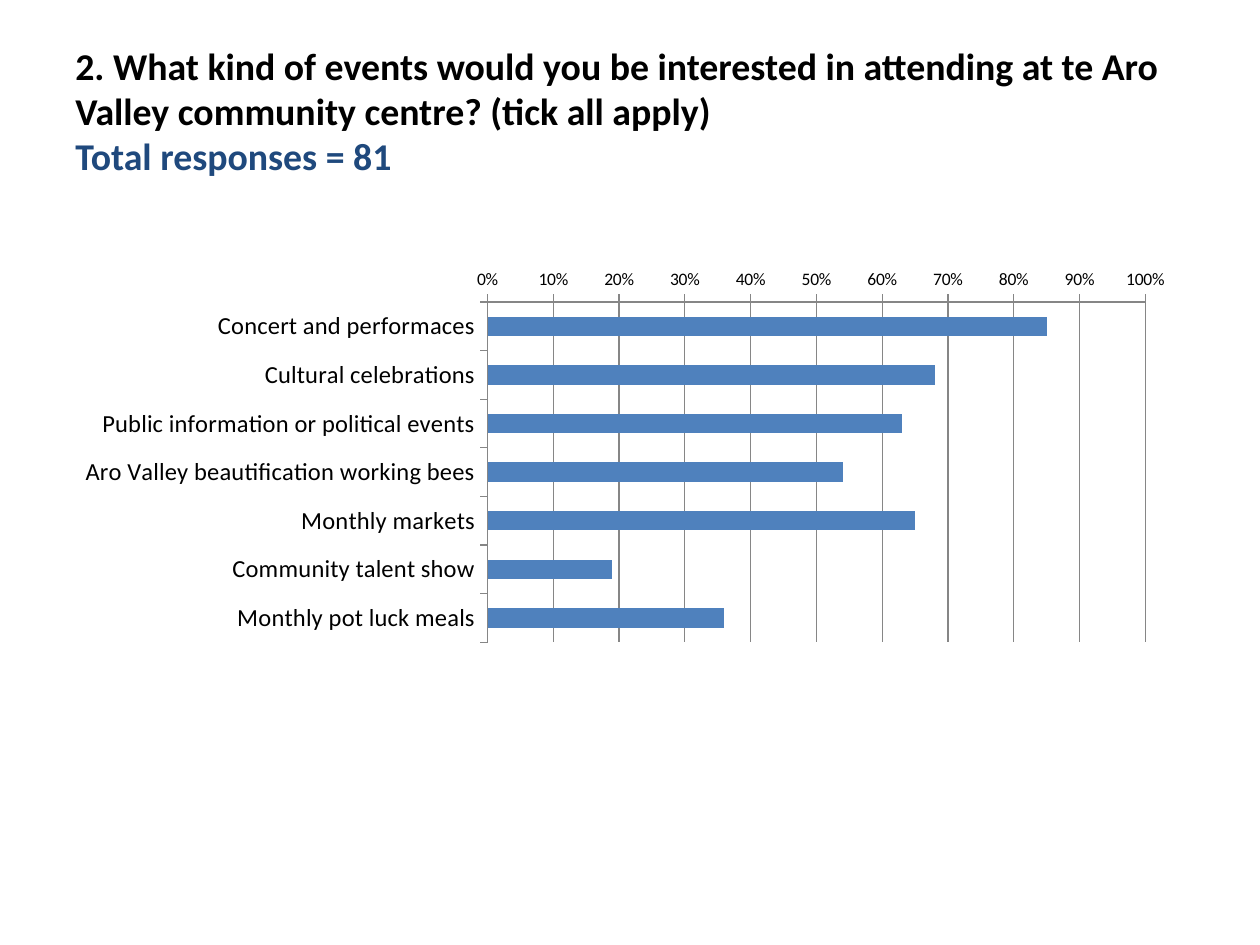
from dataclasses import dataclass

from pptx import Presentation
from pptx.chart.data import CategoryChartData
from pptx.dml.color import RGBColor
from pptx.enum import chart as ch, text
from pptx.util import Inches, Pt


@dataclass(frozen=True)
class Theme:
    font: str = "Calibri"
    ink: RGBColor = RGBColor(0x00, 0x00, 0x00)
    accent: RGBColor = RGBColor(0x1F, 0x49, 0x7D)
    bar: RGBColor = RGBColor(0x4F, 0x81, 0xBD)
    rule: RGBColor = RGBColor(0x86, 0x86, 0x86)
    title_size: float = 21.6
    category_size: float = 14
    value_size: float = 10
    rule_width: float = 0.75


@dataclass(frozen=True)
class Answer:
    label: str
    share: float


THEME = Theme()
QUESTION = ("2. What kind of events would you be interested in attending "
            "at te Aro Valley community centre? (tick all apply)")
TOTAL = "Total responses = 81"
ANSWERS = [
    Answer("Concert and performaces", 0.85),
    Answer("Cultural celebrations", 0.68),
    Answer("Public information or political events", 0.63),
    Answer("Aro Valley beautification working bees", 0.54),
    Answer("Monthly markets", 0.65),
    Answer("Community talent show", 0.19),
    Answer("Monthly pot luck meals", 0.36),
]


def style_font(font, size: float, color: RGBColor, bold: bool = False) -> None:
    font.name = THEME.font
    font.size = Pt(size)
    font.bold = bold
    font.color.rgb = color


def style_line(line) -> None:
    line.color.rgb = THEME.rule
    line.width = Pt(THEME.rule_width)


def add_title(slide) -> None:
    box = slide.shapes.add_textbox(Inches(0.5), Inches(0.3), Inches(9), Inches(1.25))
    tf = box.text_frame
    tf.word_wrap = True
    tf.vertical_anchor = text.MSO_ANCHOR.MIDDLE
    tf.margin_bottom = Inches(0.15)
    p = tf.paragraphs[0]
    p.text = f"{QUESTION}\v{TOTAL}"
    for r, color in zip(p.runs, (THEME.ink, THEME.accent)):
        style_font(r.font, THEME.title_size, color, bold=True)


def style_axis(axis, size: float) -> None:
    axis.major_tick_mark = ch.XL_TICK_MARK.OUTSIDE
    axis.minor_tick_mark = ch.XL_TICK_MARK.NONE
    style_font(axis.tick_labels.font, size, THEME.ink)
    style_line(axis.format.line)


def add_answers_chart(slide, answers: list[Answer]) -> None:
    data = CategoryChartData(number_format="0%")
    data.categories = [a.label for a in answers]
    data.add_series("Series 1", [a.share for a in answers])
    chart = slide.shapes.add_chart(
        ch.XL_CHART_TYPE.BAR_CLUSTERED,
        Inches(0.5), Inches(2.08), Inches(8.92), Inches(3.08), data).chart
    chart.has_title = False
    chart.has_legend = False
    style_font(chart.font, THEME.value_size, THEME.ink)

    # Bars
    plot = chart.plots[0]
    plot.gap_width = 150
    plot.vary_by_categories = False
    fill = plot.series[0].format.fill
    fill.solid()
    fill.fore_color.rgb = THEME.bar

    # First answer on top, which also moves the percentages to the top
    style_axis(chart.category_axis, THEME.category_size)
    chart.category_axis.reverse_order = True

    # Percentage scale
    scale = chart.value_axis
    style_axis(scale, THEME.value_size)
    scale.minimum_scale, scale.maximum_scale, scale.major_unit = 0, 1, 0.1
    scale.tick_labels.number_format = "0%"
    scale.tick_labels.number_format_is_linked = False
    scale.has_major_gridlines = True
    style_line(scale.major_gridlines.format.line)


def main() -> None:
    prs = Presentation()
    prs.slide_width, prs.slide_height = Inches(10), Inches(7.5)
    slide = prs.slides.add_slide(prs.slide_layouts[6])
    add_title(slide)
    add_answers_chart(slide, ANSWERS)
    prs.save("out.pptx")


if __name__ == "__main__":
    main()
